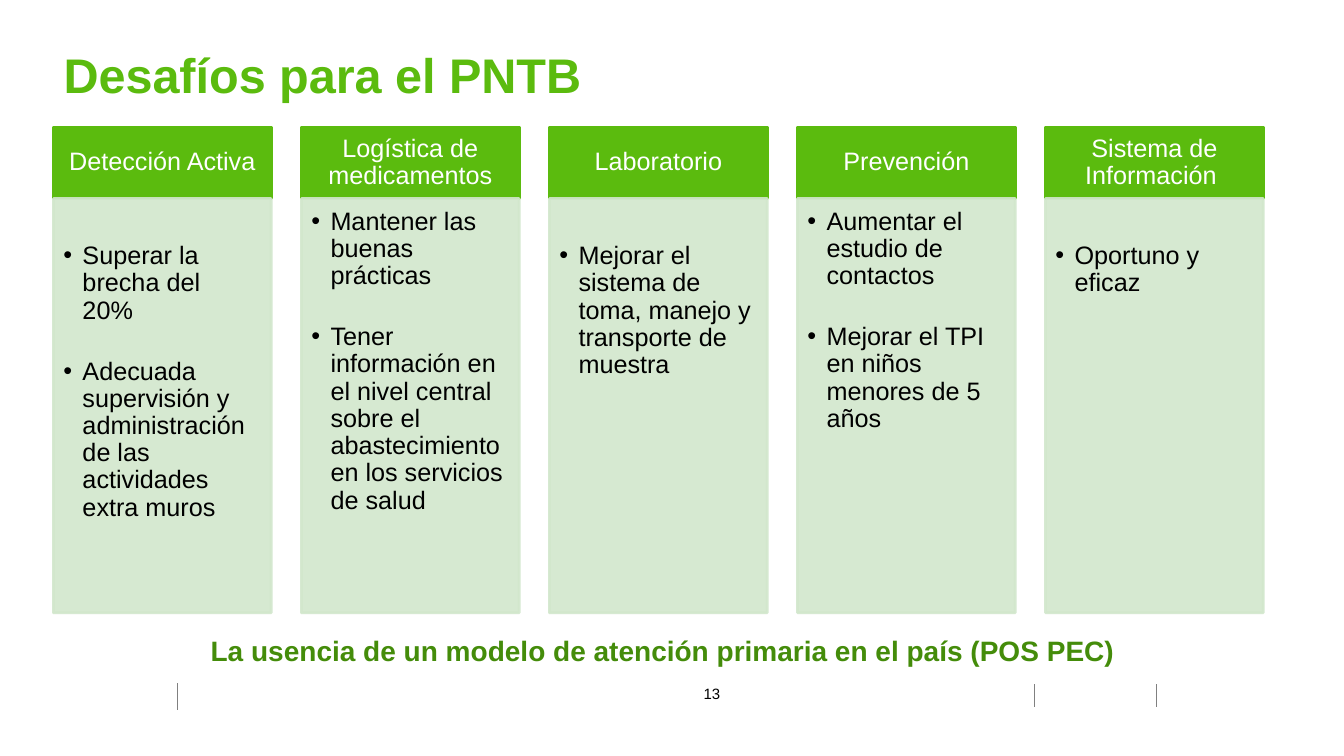
"""Build the slide on the challenges for the PNTB."""
from lxml import etree
from pptx import Presentation, util as u
from pptx.dml.color import RGBColor
from pptx.enum import shapes, text
from pptx.oxml import ns

PX = 9144
COLORS = {"green": "5BBB0E", "pale": "D2E7CC", "dark": "448C0A",
          "black": "000000", "white": "FFFFFF", "gray": "808080"}
CHALLENGES = [
    ("Detección Activa", 44, ["Superar la brecha del 20%",
     "Adecuada supervisión y administración de las actividades extra muros"]),
    ("Logística de medicamentos", 10, ["Mantener las buenas prácticas",
     "Tener información en el nivel central sobre el abastecimiento en los servicios de salud"]),
    ("Laboratorio", 44, ["Mejorar el sistema de toma, manejo y transporte de muestra"]),
    ("Prevención", 10, ["Aumentar el estudio de contactos",
     "Mejorar el TPI en niños menores de 5 años"]),
    ("Sistema de Información ", 44, ["Oportuno y eficaz"]),
]


def add_run(paragraph, words, size, color, bold=False):
    run = paragraph.add_run()
    run.text = words
    run.font.name = "Arial"
    run.font.size = u.Pt(size)
    run.font.bold = bold
    run.font.color.rgb = RGBColor.from_string(COLORS[color])


def add_panel(left, top, height, color, anchor, insets):
    panel = slide.shapes.add_shape(shapes.MSO_SHAPE.RECTANGLE,
                                   left * PX, top * PX, 216 * PX, height * PX)
    panel.shadow.inherit = False
    panel.fill.solid()
    panel.line.width = u.Pt(2)
    for paint in (panel.fill, panel.line.fill):
        paint.solid()
        paint.fore_color.rgb = RGBColor.from_string(COLORS[color])
    frame = panel.text_frame
    frame.word_wrap = True
    frame.vertical_anchor = anchor
    (frame.margin_left, frame.margin_top,
     frame.margin_right, frame.margin_bottom) = [inset * PX for inset in insets]
    return panel


prs = Presentation()
prs.slide_width, prs.slide_height = 1333 * PX, 750 * PX
slide = prs.slides.add_slide(prs.slide_layouts[5])

for x, top, bottom in [(176, 678, 704), (1147, 679, 701), (1026, 679, 701)]:
    divider = slide.shapes.add_connector(shapes.MSO_CONNECTOR.STRAIGHT,
                                         x * PX, top * PX, x * PX, bottom * PX)
    divider.line.width = u.Pt(0.25)
    divider.line.color.rgb = RGBColor.from_string(COLORS["gray"])
    etree.SubElement(divider.element.spPr, ns.qn("a:effectLst"))

title = slide.shapes.title
title.left, title.top, title.width, title.height = 53 * PX, 40 * PX, 1194 * PX, 68 * PX
title.text_frame.vertical_anchor = text.MSO_ANCHOR.TOP
heading = title.text_frame.paragraphs[0]
heading.alignment = text.PP_ALIGN.LEFT
add_run(heading, "Desafíos para el PNTB", 34.7, "green", True)

for column, (area, top_inset, tasks) in enumerate(CHALLENGES):
    left = 53 + 246 * column
    header = add_panel(left, 126, 71, "green", text.MSO_ANCHOR.MIDDLE, (13, 8, 13, 8))
    label = header.text_frame.paragraphs[0]
    label.alignment = text.PP_ALIGN.CENTER
    label.line_spacing = 0.9
    add_run(label, area, 18, "white")

    body = add_panel(left, 197, 411, "pale", text.MSO_ANCHOR.TOP, (10, top_inset, 14, 16))
    for color in body.element.spPr.iter(ns.qn("a:srgbClr")):
        etree.SubElement(color, ns.qn("a:alpha"), val="90000")
    for index, task in enumerate(tasks):
        frame = body.text_frame
        item = frame.add_paragraph() if index else frame.paragraphs[0]
        item.alignment = text.PP_ALIGN.LEFT
        item.line_spacing = 0.9
        if index:
            item.space_before = u.Pt(24)
        props = item._p.get_or_add_pPr()
        props.set("marL", str(19 * PX))
        props.set("indent", str(-19 * PX))
        etree.SubElement(props, ns.qn("a:buFont"), typeface="Arial")
        etree.SubElement(props, ns.qn("a:buChar"), char="•")
        add_run(item, task, 18, "black")

for words, box, size, color, bold in [
    ("13", (687, 674, 38, 28), 10.7, "black", False),
    ("La usencia de un modelo de atención primaria en el país (POS PEC)",
     (91, 624, 1133, 44), 20, "dark", True),
]:
    note = slide.shapes.add_textbox(*[length * PX for length in box])
    note.text_frame.word_wrap = True
    line = note.text_frame.paragraphs[0]
    line.alignment = text.PP_ALIGN.CENTER
    add_run(line, words, size, color, bold)

prs.save("out.pptx")
